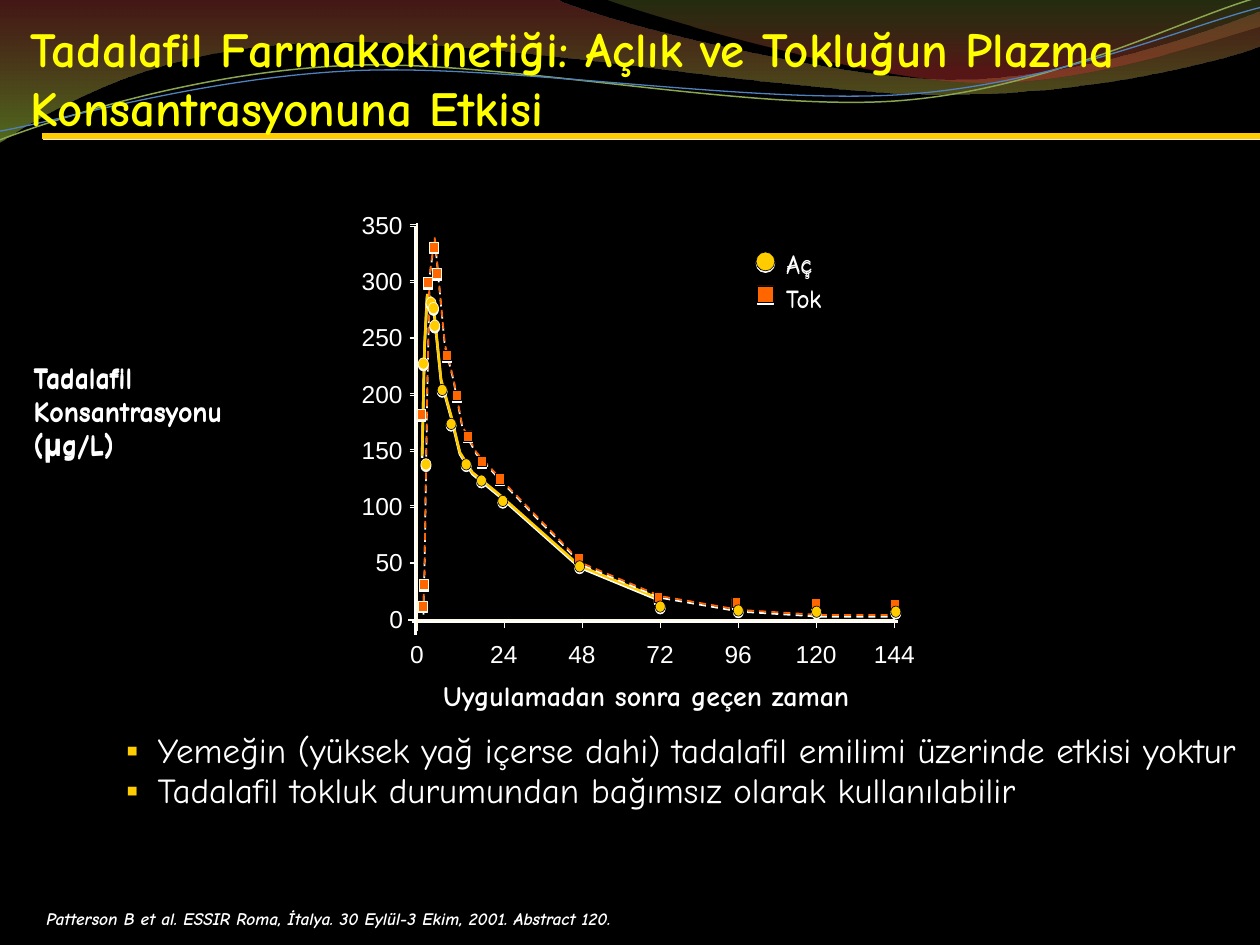
from lxml import etree
from pptx import Presentation
from pptx.dml.color import RGBColor
from pptx.enum.dml import MSO_LINE
from pptx.enum.shapes import MSO_CONNECTOR, MSO_SHAPE
from pptx.enum.text import MSO_ANCHOR, MSO_AUTO_SIZE
from pptx.oxml.ns import qn
from pptx.util import Pt

STRAIGHT = MSO_CONNECTOR.STRAIGHT
OVAL, RECT = MSO_SHAPE.OVAL, MSO_SHAPE.RECTANGLE
BOTTOM, TOP = MSO_ANCHOR.BOTTOM, MSO_ANCHOR.TOP
FIXED, GROW = MSO_AUTO_SIZE.NONE, MSO_AUTO_SIZE.SHAPE_TO_FIT_TEXT
DASH = MSO_LINE.DASH

COLORS = {
    "black": "000000", "white": "FFFFFF", "yellow": "FFFF00", "gold": "FFCC00",
    "orange": "FF6600", "cream": "FFFAE6", "grey": "EEECE1", "green": "89A54F",
    "blue": "4F81BD", "brick": "973330", "lime": "95C238", "olive": "769537",
    "red": "BE3330",
}
RGB = {name: RGBColor.from_string(value) for name, value in COLORS.items()}
COMIC, ARIAL = "Comic Neue", "Arial"
DEFAULT_INSETS = (7.2, 3.6, 7.2, 3.6)
DROP = ("white", 1, 90)


def style(shape, line, width, fill=None, shadow=None):
    """Set line and fill; shadow is (colour, distance in points, degrees)."""
    if line:
        shape.line.color.rgb = RGB[line]
        shape.line.width = Pt(width)
    else:
        shape.line.fill.background()
    if fill:
        shape.fill.solid()
        shape.fill.fore_color.rgb = RGB[fill]
    effects = etree.SubElement(shape._element.spPr, qn("a:effectLst"))
    if shadow:
        color, distance, degrees = shadow
        outer = etree.SubElement(effects, qn("a:outerShdw"), blurRad="0",
                                 dist=str(Pt(distance)), dir=str(degrees * 60000),
                                 algn="ctr", rotWithShape="0")
        etree.SubElement(outer, qn("a:srgbClr"), val=COLORS[color])


def add_text(box, lines, font, insets=DEFAULT_INSETS, anchor=TOP, wrap=True,
             auto_size=GROW, bullet=None, spacing=None, before=0, shadow=None):
    text_box = slide.shapes.add_textbox(*map(Pt, box))
    if shadow:
        style(text_box, None, 0, shadow=shadow)
    frame = text_box.text_frame
    margins = zip(("margin_left", "margin_top", "margin_right", "margin_bottom"),
                  map(Pt, insets))
    settings = {"word_wrap": wrap, "vertical_anchor": anchor,
                "auto_size": auto_size, **dict(margins)}
    for key, value in settings.items():
        setattr(frame, key, value)
    for i, line in enumerate(lines):
        paragraph = frame.paragraphs[0] if i == 0 else frame.add_paragraph()
        paragraph.add_run().text = line
        if spacing:
            paragraph.line_spacing = spacing
        if i and before:
            paragraph.space_before = Pt(before)
        if bullet:
            properties = paragraph._p.get_or_add_pPr()
            properties.set("marL", str(Pt(18)))
            properties.set("indent", str(Pt(-18)))
            bullet_color = etree.SubElement(properties, qn("a:buClr"))
            etree.SubElement(bullet_color, qn("a:srgbClr"), val=COLORS["gold"])
            etree.SubElement(properties, qn("a:buFont"), typeface=ARIAL)
            etree.SubElement(properties, qn("a:buChar"), char=bullet)
        for key, value in font.items():
            if key == "color":
                paragraph.runs[0].font.color.rgb = RGB[value]
            else:
                setattr(paragraph.runs[0].font, key, value)


prs = Presentation()
prs.slide_width, prs.slide_height = Pt(720), Pt(540)
slide = prs.slides.add_slide(prs.slide_layouts[6])
slide.background.fill.solid()
slide.background.fill.fore_color.rgb = RGB["black"]

# Header waves: one point is a straight step, three points are a Bezier step
WAVES = [
    {"start": (0, -0.7), "gradient": [(0, "brick", 45), (1, "lime", 55)], "steps": [
        [(316.8, -0.7)],
        [(342.7, 12.2), (478.1, 45.4), (545.8, 45.4)],
        [(614.2, 45.4), (689.8, 18.7), (720, 6.5)],
        [(720.7, 25.9)],
        [(707.8, 31.7), (626.4, 54.7), (537.1, 54)],
        [(447.8, 54), (275, 20.2), (185, 24.5)],
        [(92.9, 25.2), (33.1, 59.8), (-0.7, 81.4)]]},
    {"start": (344.9, -0.7), "gradient": [(0, "olive", 30), (0.8, "red", 45)], "steps": [
        [(366.5, 7.9), (491, 44.6), (553.7, 46.8)],
        [(616.3, 49.7), (691.9, 23), (720, 15.1)],
        [(720, 0)]]},
    {"start": (0, 79.9), "line": ("green", 0.85), "steps": [
        [(34.6, 67), (113.8, 41), (199.4, 37.4)],
        [(284.4, 33.8), (427, 64.1), (513.4, 57.6)],
        [(599.8, 51.1), (675.4, 10.8), (718.6, -1.4)]]},
    {"start": (0, 74.9), "line": ("blue", 0.75), "steps": [
        [(33.8, 69.1), (118.1, 43.9), (203.8, 40.3)],
        [(290.2, 36.7), (429.8, 59.8), (516.2, 54)],
        [(601.9, 48.2), (677.5, 15.1), (720, 4.3)]]},
]
for wave in WAVES:
    builder = slide.shapes.build_freeform(*map(Pt, wave["start"]))
    builder.add_line_segments([(Pt(x), Pt(y)) for step in wave["steps"] for x, y in step],
                              close="gradient" in wave)
    ribbon = builder.convert_to_shape()
    segments = iter(list(ribbon._element.iter(qn("a:lnTo"))))
    for step in wave["steps"]:
        parts = [next(segments) for _ in step]
        if len(parts) == 3:
            bezier = etree.Element(qn("a:cubicBezTo"))
            parts[0].addprevious(bezier)
            for part in parts:
                bezier.append(part[0])
                part.getparent().remove(part)
    if "gradient" in wave:
        ribbon.fill.gradient()
        ribbon.fill.gradient_angle = 270
        for stop, (position, color, _) in zip(ribbon.fill.gradient_stops, wave["gradient"]):
            stop.position = position
            stop.color.rgb = RGB[color]
        stop_colors = ribbon._element.spPr.iter(qn("a:srgbClr"))
        for stop_color, (_, _, opacity) in zip(stop_colors, wave["gradient"]):
            etree.SubElement(stop_color, qn("a:alpha"), val=str(opacity * 1000))
    else:
        ribbon.fill.background()
    style(ribbon, *wave.get("line", (None, 0)))

rule = slide.shapes.add_connector(STRAIGHT, Pt(23.8), Pt(77.8), Pt(720), Pt(77.8))
style(rule, "gold", 3, shadow=("grey", 1.4, 45))

add_text((17.3, 5.8, 693.4, 72),
         ["Tadalafil Farmakokinetiği: Açlık ve Tokluğun Plazma Konsantrasyonuna Etkisi"],
         {"size": Pt(28), "name": COMIC, "bold": True, "color": "yellow"},
         insets=(0, 3.6, 0, 0), anchor=BOTTOM, auto_size=FIXED)
add_text((19.4, 514.8, 703.4, 19.4),
         ["Patterson B et al. ESSIR Roma, İtalya. 30 Eylül-3 Ekim, 2001. Abstract 120."],
         {"size": Pt(10), "name": COMIC, "bold": True, "italic": True, "color": "white"},
         anchor=BOTTOM)

# Concentration curves
FASTED_CURVE = [
    (376.6, 342), (331.2, 323.3), (285.8, 283), (270, 270), (262.8, 258.5), (257.8, 237.6),
    (252, 216.7), (248.4, 181.4), (247, 170.6), (244.1, 168.5), (242.6, 197.3), (241.2, 260.6)]
FED_CURVE = [
    (514.1, 351.4), (468.7, 351.4), (422.6, 348.5), (377.3, 340.6), (332.6, 321.8),
    (287.3, 275), (272.2, 258.5), (264.2, 243.4), (259.2, 216.7), (254.2, 196.6),
    (249.8, 149.8), (248.4, 135.4), (245.5, 157), (244.1, 226.1), (242.6, 324), (241.9, 352.1)]
for points, color, width, dash in ((FASTED_CURVE, "gold", 1.5, None),
                                   (FED_CURVE, "orange", 1, DASH)):
    corners = [(Pt(x), Pt(y)) for x, y in points]
    builder = slide.shapes.build_freeform(*corners[0])
    builder.add_line_segments(corners[1:], close=False)
    curve = builder.convert_to_shape()
    curve.fill.background()
    style(curve, color, width, shadow=DROP)
    curve.line.dash_style = dash

# Axes, ticks and tick labels
AXIS_X, AXIS_Y = 238.3, 354.2
DIGIT = 7.9
axis_lines = [((233.3, AXIS_Y, 511.2, AXIS_Y), 1.5, ("white", 2.2, 27)),
              ((AXIS_X, 360.7, AXIS_X, 127.4), 1.5, ("white", 2.2, 117))]
labels = []
for i, hours in enumerate(range(0, 145, 24)):
    x = 243.36 + 44.64 * i if hours else AXIS_X
    if hours:
        axis_lines.append(((x, 358, x, AXIS_Y), 0.38, DROP))
    width = DIGIT * len(str(hours))
    labels.append((hours, (x - width / 2, 365, width, 17.3)))
for i, level in enumerate(range(0, 351, 50)):
    y = 353.3 - 32.16 * i
    if level:
        axis_lines.append(((234, y, AXIS_X, y), 0.38, DROP))
    width = DIGIT * len(str(level))
    labels.append((level, (230.4 - width, y - 8.3, width, 17.3)))
for ends, width, shadow in axis_lines:
    axis_line = slide.shapes.add_connector(STRAIGHT, *map(Pt, ends))
    style(axis_line, "cream", width, shadow=shadow)
for number, box in labels:
    add_text(box, [str(number)], {"size": Pt(14), "name": ARIAL, "color": "white"},
             insets=(0, 0, 0, 0), wrap=False)

# Markers, with a light edge on those close to the vertical axis
FED_MARKERS = [
    (239, 343.4), (239.8, 331.2), (238.3, 234), (241.9, 158.4), (245.5, 138.2), (247, 153.4),
    (252.7, 200.2), (258.5, 223.2), (265, 246.2), (272.9, 260.6), (283, 270.7),
    (328.3, 316.1), (373.7, 338.4), (418.3, 341.3), (463.7, 342), (509, 342.7)]
FASTED_MARKERS = [
    (240.5, 262.1), (239, 204.5), (243.4, 169.9), (244.8, 172.8), (245.5, 182.9),
    (249.8, 219.6), (254.9, 239), (263.5, 262.1), (272.2, 271.4), (284.4, 283),
    (328.3, 320.4), (374.4, 343.4), (419, 345.6), (463.7, 346.3), (509, 346.3)]
LIGHT_EDGE_LIMIT = 248
for kind, color, size, positions, key in (
        (RECT, "orange", (5, 5.8), FED_MARKERS, (432.7, 163.4, 9.4, 9.4)),
        (OVAL, "gold", (5.8, 6.5), FASTED_MARKERS, (432, 144, 10.8, 10.8))):
    for box in [(*position, *size) for position in positions] + [key]:
        marker = slide.shapes.add_shape(kind, *map(Pt, box))
        edge = "cream" if box[0] < LIGHT_EDGE_LIMIT else "black"
        style(marker, edge, 0.38, color, DROP)

add_text((442.1, 138.2, 38.9, 44.6), ["Aç", "Tok"],
         {"size": Pt(14), "name": COMIC, "color": "white"},
         wrap=False, before=3, shadow=DROP)

AXIS_TITLE = {"size": Pt(16), "name": COMIC, "bold": True, "color": "white"}
add_text((12.2, 201.9, 167.8, 65.5), ["Tadalafil", "Konsantrasyonu (μg/L)"],
         AXIS_TITLE, shadow=DROP)
add_text((72, 417.9, 642.2, 92.2),
         ["Yemeğin (yüksek yağ içerse dahi) tadalafil emilimi üzerinde etkisi yoktur",
          "Tadalafil tokluk durumundan bağımsız olarak kullanılabilir"],
         {"size": Pt(20), "name": COMIC, "color": "white"},
         insets=(0, 0, 0, 0), bullet="▪", spacing=0.95)
add_text((246.2, 384.1, 432, 26.6), ["Uygulamadan sonra geçen zaman"], AXIS_TITLE)

prs.save("out.pptx")
